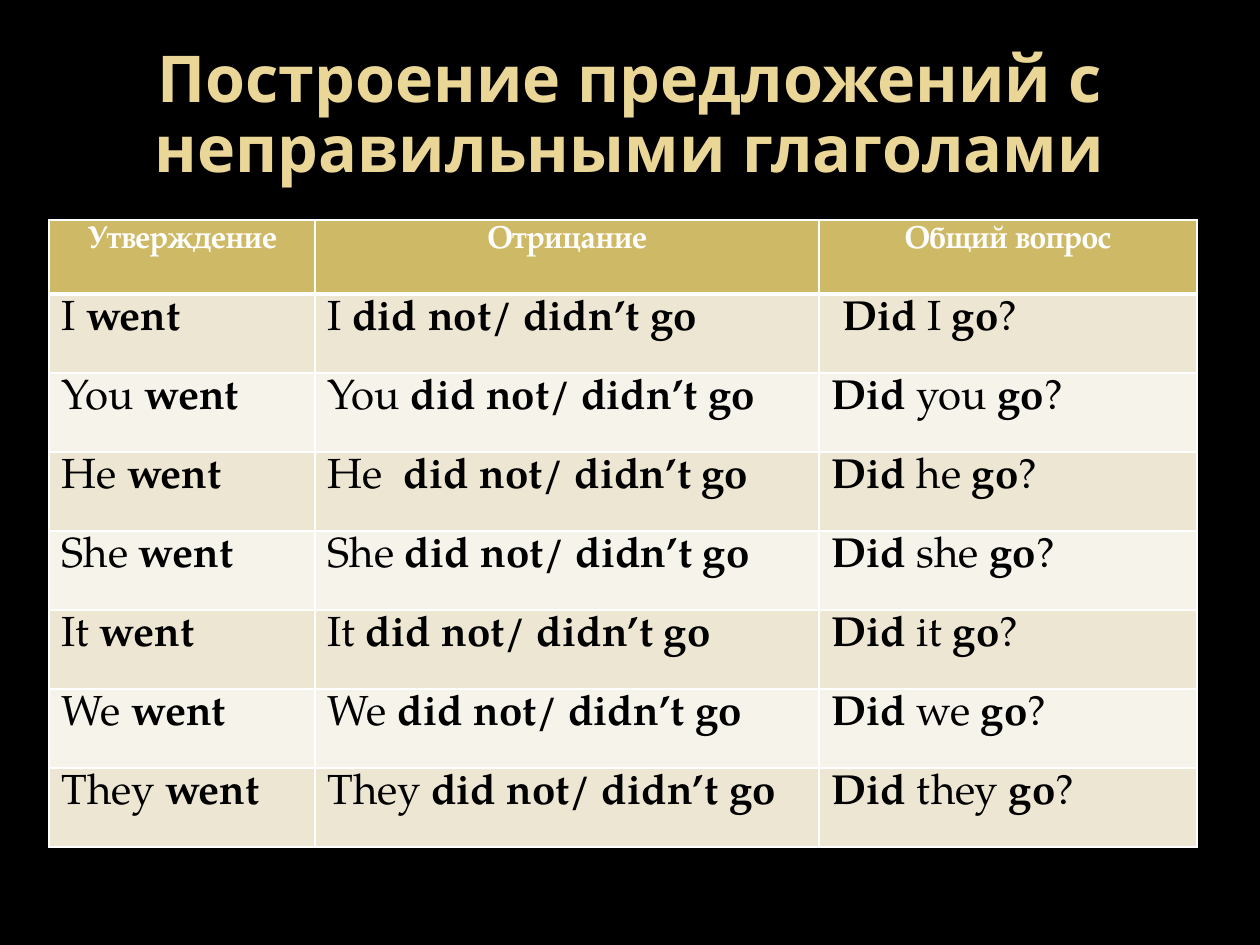
from lxml import etree
from pptx import Presentation
from pptx.dml.color import RGBColor
from pptx.enum import text
from pptx.oxml.ns import qn
from pptx.util import Emu, Pt

PX = 914400 / 126
COLORS = {
    "back": "000000", "title": "EAD696", "head": "CEB966", "dark": "EDE6D3",
    "light": "F6F3EA", "line": "FFFFFF", "ink": "000000",
}
SERIF = "TeX Gyre Pagella"
HEADS = ["Утверждение", "Отрицание", "Общий вопрос"]
NOUNS = ["I", "You", "He", "She", "It", "We", "They"]
WIDTHS = [266, 504, 378]
HEAD, ROW = 74, 79


def px(n):
    return Emu(round(n * PX))


def color(name):
    return RGBColor.from_string(COLORS[name])


def style(run, face, size, name, bold):
    font = run.font
    font.name, font.size, font.bold = face, Pt(size), bold
    font.color.rgb = color(name)


def add_title(slide, words):
    box = slide.shapes.title
    box.left, box.top, box.width, box.height = map(px, (63, 38, 1134, 157))
    frame = box.text_frame
    frame.text = words
    frame.word_wrap = True
    frame.auto_size = text.MSO_AUTO_SIZE.NONE
    frame.vertical_anchor = text.MSO_ANCHOR.MIDDLE
    para = frame.paragraphs[0]
    para.alignment = text.PP_ALIGN.CENTER
    para.line_spacing = 0.9
    style(para.runs[0], "Open Sans", 36.9, "title", True)


def edge(cell, side, width):
    props = cell._tc.get_or_add_tcPr()
    line = etree.SubElement(props, qn(f"a:ln{side}"), w=str(Pt(width)))
    fill = etree.SubElement(line, qn("a:solidFill"))
    etree.SubElement(fill, qn("a:srgbClr"), val=COLORS["line"])


def paint(cell, row):
    for side in "LRTB":
        thick = (row, side) in [(0, "B"), (1, "T")]
        edge(cell, side, 3 if thick else 1)
    cell.fill.solid()
    name = "head" if row == 0 else "dark" if row % 2 else "light"
    cell.fill.fore_color.rgb = color(name)


def write_head(cell, words):
    para = cell.text_frame.paragraphs[0]
    para.text = words
    para.alignment = text.PP_ALIGN.CENTER
    style(para.runs[0], SERIF, 18, "line", True)


def write_parts(cell, parts):
    para = cell.text_frame.paragraphs[0]
    for words, bold in parts:
        run = para.add_run()
        run.text = words
        style(run, SERIF, 24, "ink", bold)


def forms(noun):
    gap = "  " if noun == "He" else " "
    lead = " " if noun == "I" else ""
    small = noun if noun == "I" else noun.lower()
    return [
        [(f"{noun} ", False), ("went", True)],
        [(noun + gap, False), ("did not/ didn’t go", True)],
        [(f"{lead}Did", True), (f" {small} ", False), ("go", True), ("?", False)],
    ]


def add_grid(slide):
    count = len(NOUNS) + 1
    spot = map(px, (49, 220, sum(WIDTHS), HEAD + ROW * len(NOUNS)))
    grid = slide.shapes.add_table(count, len(WIDTHS), *spot).table
    for col, width in zip(grid.columns, WIDTHS):
        col.width = px(width)
    for i, row in enumerate(grid.rows):
        row.height = px(ROW if i else HEAD)
        for cell in row.cells:
            paint(cell, i)
    for cell, words in zip(grid.rows[0].cells, HEADS):
        write_head(cell, words)
    for i, noun in enumerate(NOUNS, 1):
        for cell, parts in zip(grid.rows[i].cells, forms(noun)):
            write_parts(cell, parts)


def main():
    deck = Presentation()
    deck.slide_width, deck.slide_height = px(1260), px(945)
    slide = deck.slides.add_slide(deck.slide_layouts[5])
    slide.background.fill.solid()
    slide.background.fill.fore_color.rgb = color("back")
    add_title(slide, "Построение предложений с неправильными глаголами")
    add_grid(slide)
    deck.save("out.pptx")


if __name__ == "__main__":
    main()
